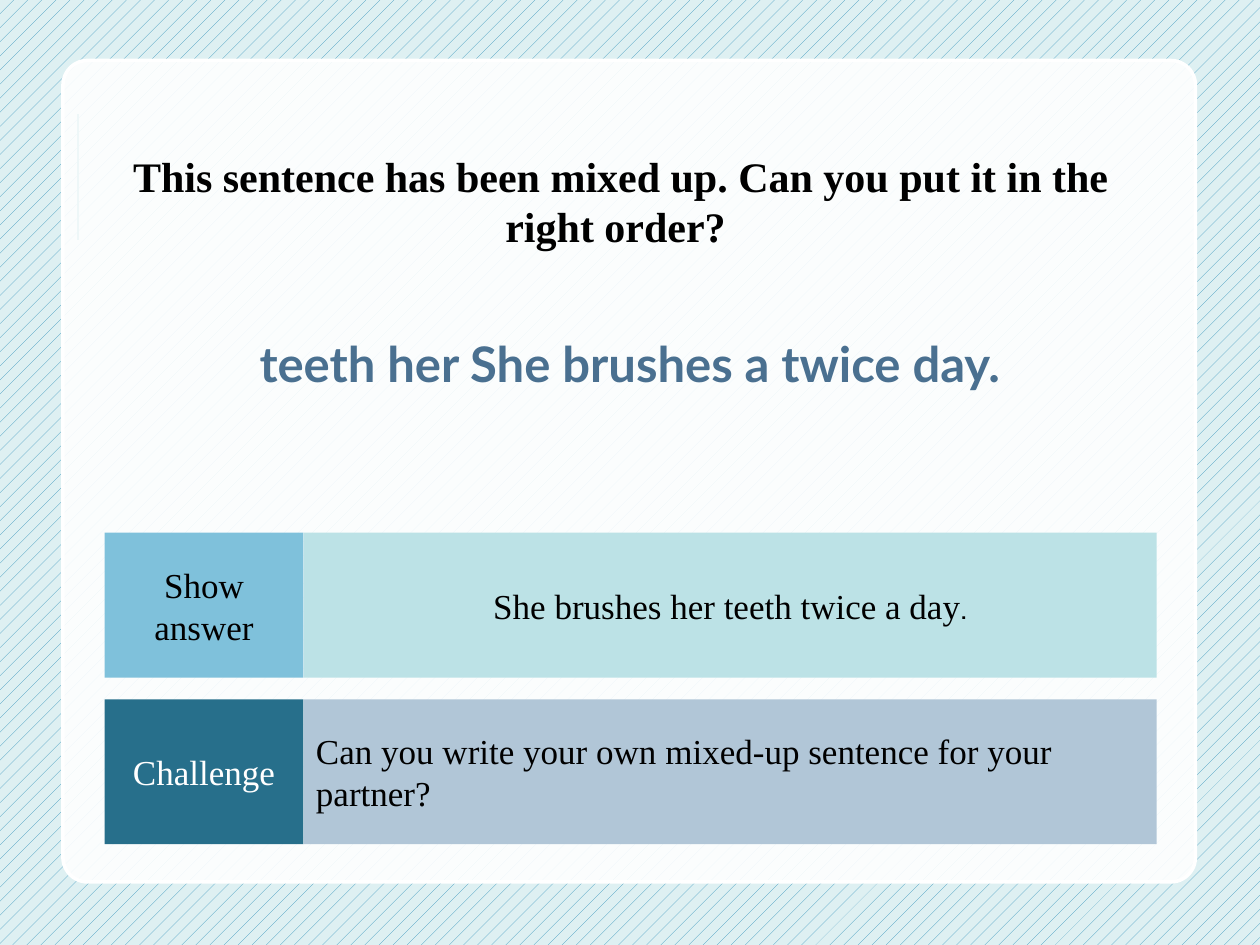
from dataclasses import dataclass

from lxml.etree import SubElement as Sub
from pptx import Presentation
from pptx.dml.color import RGBColor as RGB
from pptx.enum.dml import MSO_PATTERN as Pattern
from pptx.enum.shapes import MSO_CONNECTOR as Link, MSO_SHAPE as Shape
from pptx.enum.text import MSO_ANCHOR as Anchor, MSO_AUTO_SIZE as Auto, PP_ALIGN as Align
from pptx.oxml.ns import qn
from pptx.util import Cm, Pt


@dataclass(frozen=True)
class Theme:
    serif: str = "Times New Roman"
    sans: str = "Lato"
    stop: str = "Cabin"
    black: str = "000000"
    white: str = "FFFFFF"
    hatch: str = "3494BA"
    back: str = "DEF0F2"
    rule: str = "58B6C0"
    mixed: str = "4A7090"
    show: str = "7FC1DB"
    answer: str = "BCE2E6"
    dare: str = "276F8B"
    task: str = "B1C6D7"
    head: int = 24
    big: int = 28
    text: int = 20
    small: int = 18


theme = Theme()


def style(para, name, size, color, bold=False, align=Align.CENTER):
    para.alignment = align
    font = para.font
    font.name, font.size, font.bold = name, Pt(size), bold
    font.color.rgb = RGB.from_string(color)


def block(kind, left, top, width, height, color):
    shape = slide.shapes.add_shape(kind, Cm(left), Cm(top), Cm(width), Cm(height))
    shape.shadow.inherit = False
    shape.fill.solid()
    shape.fill.fore_color.rgb = RGB.from_string(color)
    shape.line.fill.background()
    return shape


deck = Presentation()
deck.slide_width, deck.slide_height = Cm(25.4), Cm(19.05)
slide = deck.slides.add_slide(deck.slide_layouts[5])

# Hatched background
fill = slide.background.fill
fill.patterned()
fill.pattern = Pattern.PERCENT_10
fill.fore_color.rgb = RGB.from_string(theme.hatch)
fill.back_color.rgb = RGB.from_string(theme.back)

# Side rule, showing faintly through the panel
rule = slide.shapes.add_connector(Link.STRAIGHT, Cm(1.57), Cm(4.83), Cm(1.57), Cm(2.29))
rule.line.color.rgb = RGB.from_string(theme.rule)
rule.line.width = Pt(1.5)
Sub(rule._element.spPr, qn("a:effectLst"))

# White panel, slightly see-through
panel = block(Shape.ROUNDED_RECTANGLE, 1.27, 1.22, 22.83, 16.56, theme.white)
panel.adjustments[0] = 0.03
panel.line.color.rgb = RGB.from_string(theme.white)
panel.line.width = Pt(2)
tint = panel._element.spPr.find(qn("a:solidFill"))[0]
Sub(tint, qn("a:alpha"), val="90000")

# Title, brought in front of the panel
title = slide.shapes.title
title._element.getparent().append(title._element)
title.left, title.top, title.width, title.height = Cm(1.91), Cm(2.9), Cm(21.21), Cm(2.31)
frame = title.text_frame
frame.text = "This sentence has been mixed up. Can you put it in the right order? "
frame.vertical_anchor = Anchor.TOP
frame.auto_size = Auto.SHAPE_TO_FIT_TEXT
style(frame.paragraphs[0], theme.serif, theme.head, theme.black, bold=True)

# Mixed-up sentence
box = slide.shapes.add_textbox(Cm(4.62), Cm(6.6), Cm(16.15), Cm(1.45))
frame = box.text_frame
frame.text = "teeth her She brushes a twice day."
frame.word_wrap = False
frame.auto_size = Auto.SHAPE_TO_FIT_TEXT
style(frame.paragraphs[0], theme.sans, theme.big, theme.mixed, bold=True)

# Answer and challenge rows: a label beside its text
left, split, right = 2.11, 6.12, 23.32
first, step, high = 10.74, 3.36, 2.92
rows = [
    [("Show answer", theme.show, theme.black, Align.CENTER),
     ("She brushes her teeth twice a day", theme.answer, theme.black, Align.CENTER)],
    [("Challenge", theme.dare, theme.white, Align.CENTER),
     ("Can you write your own mixed-up sentence for your partner?",
      theme.task, theme.black, Align.LEFT)],
]
cells = []
for i, row in enumerate(rows):
    spans = [(left, split), (split, right)]
    for (start, end), (words, color, ink, align) in zip(spans, row):
        cell = block(Shape.RECTANGLE, start, first + i * step, end - start, high, color)
        cell.text_frame.text = words
        cell.text_frame.vertical_anchor = Anchor.MIDDLE
        style(cell.text_frame.paragraphs[0], theme.serif, theme.text, ink, align=align)
        cells.append(cell)

# Full stop of the answer, in its own font
stop = cells[1].text_frame.paragraphs[0].add_run()
stop.text = "."
stop.font.name, stop.font.size = theme.stop, Pt(theme.small)

deck.save("out.pptx")
